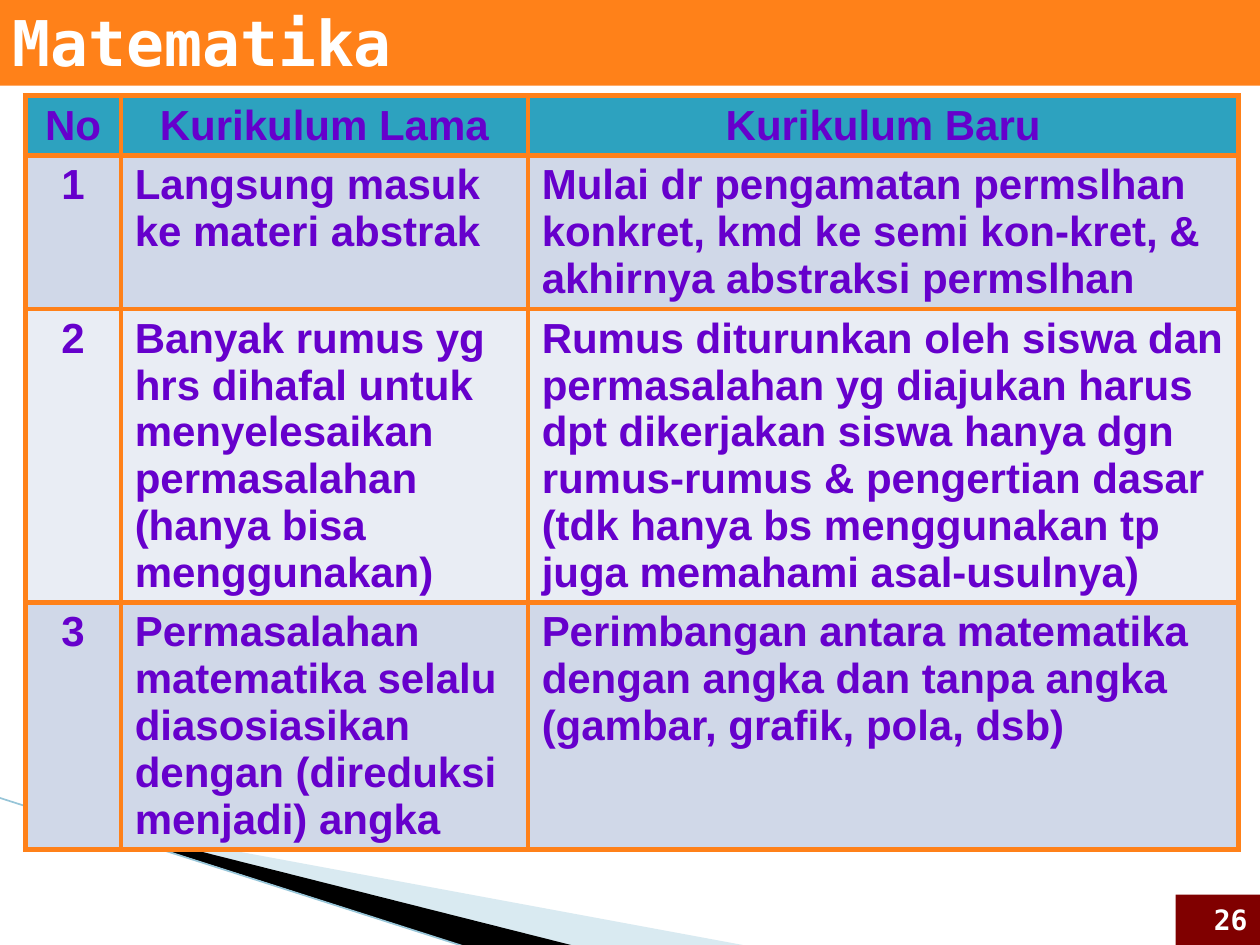
from dataclasses import dataclass

import pptx
import pptx.dml.color
import pptx.enum.shapes
import pptx.enum.text
import pptx.oxml
import pptx.oxml.ns
import pptx.util
from lxml import etree

Inches = pptx.util.Inches
Pt = pptx.util.Pt
RGBColor = pptx.dml.color.RGBColor
Align = pptx.enum.text.PP_ALIGN
Anchor = pptx.enum.text.MSO_ANCHOR

ORANGE = RGBColor(0xFF, 0x81, 0x19)
MAROON = RGBColor(0x80, 0x00, 0x00)
WHITE = RGBColor(0xFF, 0xFF, 0xFF)
BLACK = RGBColor(0x00, 0x00, 0x00)
PURPLE = RGBColor(0x66, 0x00, 0xCC)
TEAL = RGBColor(0x2D, 0xA2, 0xBF)
PALE_BLUE = RGBColor(0xA0, 0xCB, 0xDC)
LINE_BLUE = RGBColor(0x97, 0xC5, 0xD8)
BAND_DARK = RGBColor(0xD0, 0xD8, 0xE8)
BAND_LIGHT = RGBColor(0xE9, 0xED, 0xF4)

MONO = "DejaVu Sans Mono"
COLUMN_WIDTHS = (0.76, 3.23, 5.64)


@dataclass
class Wedge:
    points: list[tuple[float, float]]
    color: RGBColor
    opacity: int = 100


@dataclass
class Row:
    cells: tuple[str, str, str]
    height: float


WEDGES = [
    Wedge([(0.55, 6.51), (5.95, 7.51), (4.56, 7.51), (0.55, 6.5)], PALE_BLUE, 40),
    Wedge([(0.53, 6.49), (4.57, 7.51), (3.72, 7.52), (0.54, 6.5)], BLACK),
]

ROWS = [
    Row(("No", "Kurikulum Lama", "Kurikulum Baru"), 0.47),
    Row(("1", "Langsung masuk ke materi abstrak",
         "Mulai dr pengamatan permslhan konkret, kmd ke semi kon-kret, & "
         "akhirnya abstraksi permslhan"), 1.22),
    Row(("2", "Banyak rumus yg hrs dihafal untuk menyelesaikan permasalahan "
         "(hanya bisa menggunakan)",
         "Rumus diturunkan oleh siswa dan permasalahan yg diajukan harus dpt "
         "dikerjakan siswa hanya dgn rumus-rumus & pengertian dasar (tdk hanya "
         "bs menggunakan tp juga memahami asal-usulnya)"), 2.33),
    Row(("3", "Permasalahan matematika selalu diasosiasikan dengan "
         "(direduksi menjadi) angka",
         "Perimbangan antara matematika dengan angka dan tanpa angka "
         "(gambar, grafik, pola, dsb)"), 1.96),
]


def write_text(text_frame, text: str, *, size: float, font: str, color: RGBColor,
               align=Align.LEFT) -> None:
    text_frame.word_wrap = True
    paragraph = text_frame.paragraphs[0]
    paragraph.alignment = align
    run = paragraph.add_run()
    run.text = text
    run.font.size = Pt(size)
    run.font.name = font
    run.font.bold = True
    run.font.color.rgb = color


def fill_solid(shape, color: RGBColor) -> None:
    shape.fill.solid()
    shape.fill.fore_color.rgb = color


def draw_wedge(slide, wedge: Wedge) -> None:
    points = [(Inches(x), Inches(y)) for x, y in wedge.points]
    builder = slide.shapes.build_freeform(*points[0])
    builder.add_line_segments(points[1:], close=True)
    shape = builder.convert_to_shape()
    shape.shadow.inherit = False
    shape.line.fill.background()
    fill_solid(shape, wedge.color)
    if wedge.opacity < 100:
        color = shape.fill._xPr.find(".//" + pptx.oxml.ns.qn("a:srgbClr"))
        alpha = etree.SubElement(color, pptx.oxml.ns.qn("a:alpha"))
        alpha.set("val", str(wedge.opacity * 1000))


def draw_edge_line(slide) -> None:
    line = slide.shapes.add_connector(
        pptx.enum.shapes.MSO_CONNECTOR.STRAIGHT,
        Inches(-0.01), Inches(6.33), Inches(3.71), Inches(7.52))
    line.line.color.rgb = LINE_BLUE
    line.line.width = Pt(0.95)
    etree.SubElement(line._element.spPr, pptx.oxml.ns.qn("a:effectLst"))


def draw_title(slide) -> None:
    title = slide.shapes.title
    title.left, title.top = Inches(0), Inches(-0.03)
    title.width, title.height = Inches(10), Inches(0.71)
    fill_solid(title, ORANGE)
    title.text_frame.vertical_anchor = Anchor.MIDDLE
    write_text(title.text_frame, "Matematika", size=36, font=MONO, color=WHITE)


def set_borders(cell, color: RGBColor, width: float) -> None:
    """Give all four sides of a cell a solid line; call before filling the cell."""
    properties = cell._tc.get_or_add_tcPr()
    for side in ("lnL", "lnR", "lnT", "lnB"):
        properties.append(pptx.oxml.parse_xml(
            f'<a:{side} {pptx.oxml.ns.nsdecls("a")} w="{Pt(width)}">'
            f'<a:solidFill><a:srgbClr val="{color}"/></a:solidFill></a:{side}>'))


def draw_table(slide) -> None:
    frame = slide.shapes.add_table(
        len(ROWS), len(COLUMN_WIDTHS), Inches(0.2), Inches(0.76),
        Inches(sum(COLUMN_WIDTHS)), Inches(sum(row.height for row in ROWS)))
    table = frame.table
    for column, width in zip(table.columns, COLUMN_WIDTHS):
        column.width = Inches(width)
    for row_index, row in enumerate(ROWS):
        table.rows[row_index].height = Inches(row.height)
        band = BAND_DARK if row_index % 2 else BAND_LIGHT
        for column_index, text in enumerate(row.cells):
            cell = table.cell(row_index, column_index)
            set_borders(cell, ORANGE, 3)
            fill_solid(cell, band if row_index else TEAL)
            cell.margin_left = cell.margin_right = Inches(0.11)
            cell.margin_top = cell.margin_bottom = Inches(0.05)
            centred = row_index == 0 or column_index == 0
            write_text(cell.text_frame, text, size=24, font="Arial", color=PURPLE,
                       align=Align.CENTER if centred else Align.LEFT)


def draw_page_number(slide) -> None:
    box = slide.shapes.add_shape(
        pptx.enum.shapes.MSO_SHAPE.RECTANGLE,
        Inches(9.33), Inches(7.1), Inches(0.67), Inches(0.4))
    box.shadow.inherit = False
    box.line.fill.background()
    fill_solid(box, MAROON)
    box.text_frame.vertical_anchor = Anchor.MIDDLE
    write_text(box.text_frame, "26", size=16, font=MONO, color=WHITE,
               align=Align.RIGHT)


def main() -> None:
    presentation = pptx.Presentation()
    presentation.slide_width = Inches(10)
    presentation.slide_height = Inches(7.5)
    slide = presentation.slides.add_slide(presentation.slide_layouts[5])
    for wedge in WEDGES:
        draw_wedge(slide, wedge)
    draw_edge_line(slide)
    draw_title(slide)
    draw_table(slide)
    draw_page_number(slide)
    presentation.save("out.pptx")


if __name__ == "__main__":
    main()
